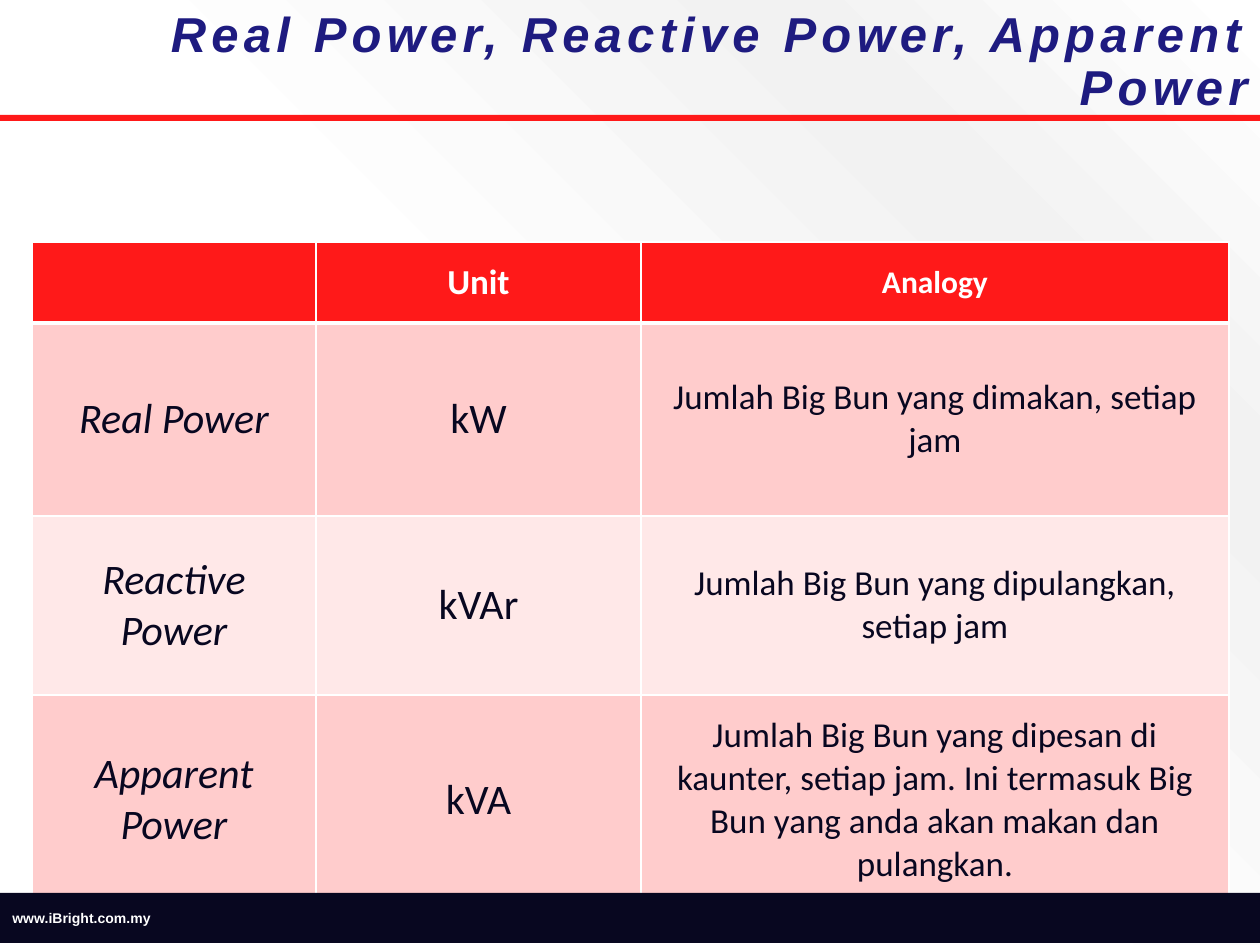
from typing import NamedTuple

from lxml.etree import SubElement
from pptx import Presentation
from pptx.dml.color import RGBColor
from pptx.enum.shapes import MSO_SHAPE as Shape
from pptx.enum.text import MSO_ANCHOR as Anchor, PP_ALIGN as Align
from pptx.oxml import parse_xml
from pptx.oxml.ns import nsdecls, qn
from pptx.util import Emu, Pt

PX = 914400 / 126
WHITE = RGBColor(0xFF, 0xFF, 0xFF)
RED = RGBColor(0xFF, 0x19, 0x19)
PINK = RGBColor(0xFF, 0xCC, 0xCC)
PALE_PINK = RGBColor(0xFF, 0xE8, 0xE8)
NAVY = RGBColor(0x08, 0x07, 0x20)
TITLE_BLUE = RGBColor(0x1E, 0x1B, 0x80)
GREY = RGBColor(0xF2, 0xF2, 0xF2)

BACKGROUND_STOPS = [(0, WHITE), (22, GREY), (53, WHITE), (82, WHITE)]
COLUMN_WIDTHS = [284, 325, 588]
ROW_HEIGHTS = [81, 193, 179, 210]
ROWS = [
    ("", "Unit", "Analogy"),
    ("Real Power", "kW", "Jumlah Big Bun yang dimakan, setiap jam"),
    ("Reactive Power", "kVAr", "Jumlah Big Bun yang dipulangkan, setiap jam"),
    ("Apparent Power", "kVA",
     "Jumlah Big Bun yang dipesan di kaunter, setiap jam. "
     "Ini termasuk Big Bun yang anda akan makan dan pulangkan."),
]


class Box(NamedTuple):
    left: int
    top: int
    width: int
    height: int

    def emu(self) -> list[Emu]:
        return [px(value) for value in self]


class TextStyle(NamedTuple):
    size: int
    color: RGBColor
    name: str = "Calibri"
    bold: bool = False
    italic: bool = False
    align: Align = Align.CENTER


HEADER_STYLES = [TextStyle(size, WHITE, bold=True) for size in (20, 20, 18)]
BODY_STYLES = [TextStyle(24, NAVY, italic=True), TextStyle(24, NAVY), TextStyle(20, NAVY)]
TITLE_STYLE = TextStyle(28, TITLE_BLUE, "Arial", True, True, Align.RIGHT)
FOOTER_STYLE = TextStyle(8, WHITE, "Arial", True, align=Align.LEFT)


def px(value: int) -> Emu:
    return Emu(round(value * PX))


def write(frame, text: str, style: TextStyle):
    paragraph = frame.paragraphs[0]
    paragraph.alignment = style.align
    run = paragraph.add_run()
    run.text = text
    formats = {"size": Pt(style.size), "name": style.name,
               "bold": style.bold, "italic": style.italic}
    for attribute, value in formats.items():
        setattr(run.font, attribute, value)
    run.font.color.rgb = style.color
    return paragraph, run


def paint_background(slide) -> None:
    """Fill the background with a radial gradient centred on the top right corner."""
    slide.background.fill.solid()
    properties = slide.background._cSld.bg.bgPr
    stops = "".join(f'<a:gs pos="{pos * 1000}"><a:srgbClr val="{color}"/></a:gs>'
                    for pos, color in BACKGROUND_STOPS)
    gradient = parse_xml(
        f'<a:gradFill {nsdecls("a")} rotWithShape="1"><a:gsLst>{stops}</a:gsLst>'
        '<a:path path="circle"><a:fillToRect l="100000" b="100000"/></a:path></a:gradFill>')
    properties.replace(properties.find(qn("a:solidFill")), gradient)


def add_bar(slide, box: Box, color: RGBColor):
    bar = slide.shapes.add_shape(Shape.RECTANGLE, *box.emu())
    bar.shadow.inherit = False
    bar.fill.solid()
    bar.fill.fore_color.rgb = color
    bar.line.fill.background()
    return bar


def add_title(slide, box: Box, text: str) -> None:
    frame = slide.shapes.add_textbox(*box.emu()).text_frame
    frame.word_wrap = True
    frame.vertical_anchor = Anchor.MIDDLE
    paragraph, run = write(frame, text, TITLE_STYLE)
    paragraph.line_spacing = 0.9
    run.font._element.set("spc", "300")


def add_borders(cell, bottom_width: int) -> None:
    """Draw white borders; they must precede the cell's fill."""
    properties = cell._tc.get_or_add_tcPr()
    for side, width in {"L": 1, "R": 1, "T": 1, "B": bottom_width}.items():
        line = SubElement(properties, qn(f"a:ln{side}"), w=str(Pt(width)))
        fill = SubElement(line, qn("a:solidFill"))
        SubElement(fill, qn("a:srgbClr"), val=str(WHITE))


def add_power_table(slide, left: int, top: int) -> None:
    box = Box(left, top, sum(COLUMN_WIDTHS), sum(ROW_HEIGHTS))
    table = slide.shapes.add_table(len(ROWS), len(COLUMN_WIDTHS), *box.emu()).table
    for column, width in zip(table.columns, COLUMN_WIDTHS):
        column.width = px(width)
    for index, (row, height, texts) in enumerate(zip(table.rows, ROW_HEIGHTS, ROWS)):
        row.height = px(height)
        is_header = index == 0
        styles = HEADER_STYLES if is_header else BODY_STYLES
        color = RED if is_header else (PINK if index % 2 else PALE_PINK)
        for cell, text, style in zip(row.cells, texts, styles):
            add_borders(cell, 3 if index == 0 else 1)
            if index == 1:
                cell._tc.tcPr.find(qn("a:lnT")).set("w", str(Pt(3)))
            cell.fill.solid()
            cell.fill.fore_color.rgb = color
            cell.vertical_anchor = Anchor.MIDDLE
            if text:
                write(cell.text_frame, text, style)


def main() -> None:
    presentation = Presentation()
    presentation.slide_width, presentation.slide_height = px(1260), px(945)
    slide = presentation.slides.add_slide(presentation.slide_layouts[6])
    paint_background(slide)
    add_bar(slide, Box(0, 115, 1260, 6), RED)
    add_title(slide, Box(126, 3, 1134, 120), "Real Power, Reactive Power, Apparent Power")
    add_power_table(slide, 32, 242)
    footer = add_bar(slide, Box(0, 893, 1260, 50), NAVY)
    footer.text_frame.vertical_anchor = Anchor.MIDDLE
    write(footer.text_frame, "www.iBright.com.my", FOOTER_STYLE)
    presentation.save("out.pptx")


if __name__ == "__main__":
    main()
